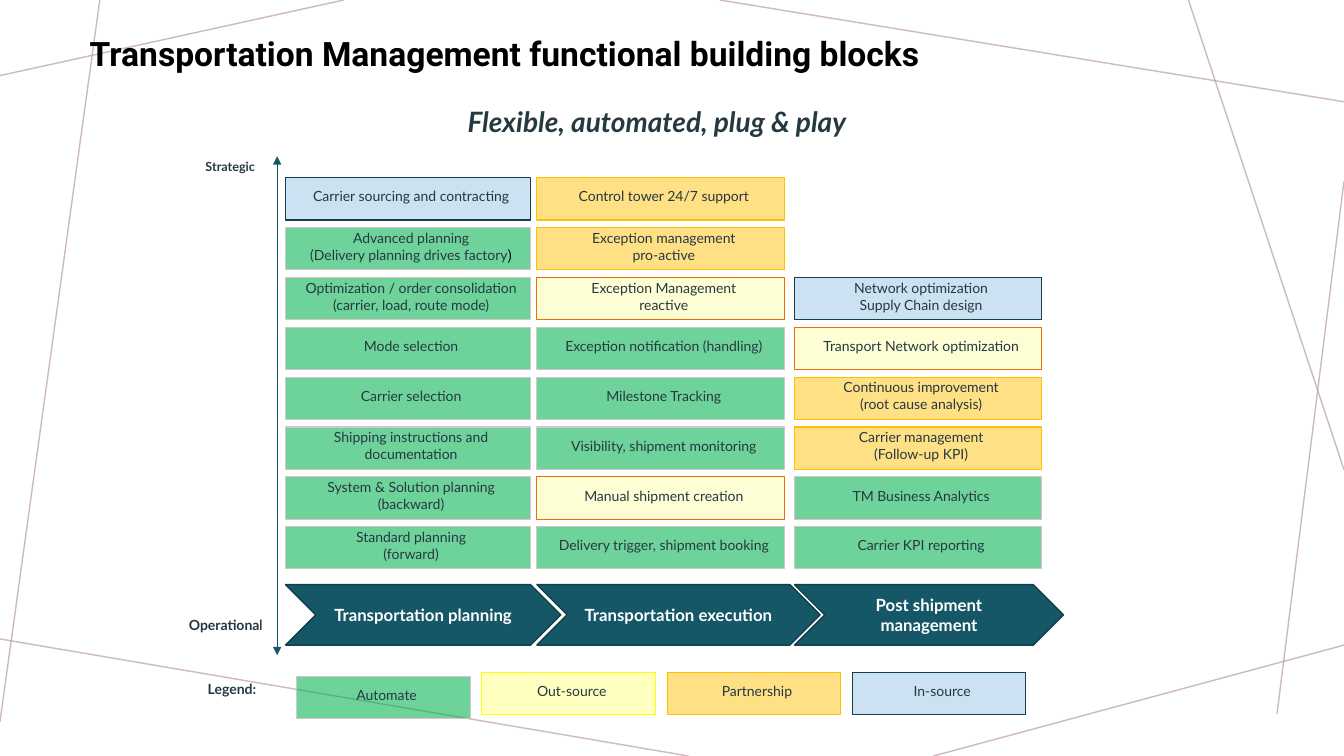
from pptx import Presentation
from pptx.dml.color import RGBColor
from pptx.enum.shapes import MSO_CONNECTOR as Link, MSO_SHAPE as Form
from pptx.enum.text import MSO_ANCHOR as Anchor, PP_ALIGN as Align
from pptx.oxml.ns import qn
from pptx.oxml.xmlchemy import OxmlElement as Node
from pptx.util import Pt

INK, TEAL = "263941", "155767"
# kind: fill, opacity in percent, outline
KINDS = {
    "auto": ("00B050", 57, "D6C4C6"),
    "out": ("FCFC30", 20, "EB6D04"),
    "part": ("FFC000", 48, "FFC000"),
    "own": ("0070C0", 20, "10414D"),
    "key": ("FFFF99", 62, "FFFF00"),
}
WEB = [
    (245.5, 0, 0, 54), (71.3, 0, 0, 515.5), (491.8, 540, 0, 456.4),
    (960, 460.8, 666.7, 540), (960, 129.6, 912.2, 509.8),
    (960, 335.5, 848.9, 0), (960, 72.7, 514.1, 0),
]
# left, width, chevron width, chevron label, index of top row, blocks downward
STAGES = [
    (204, 175, 196.6, "Transportation planning", 0, [
        ("own", "Carrier sourcing and contracting"),
        ("auto", "Advanced planning\n(Delivery planning drives factory|)"),
        ("auto", "Optimization / order consolidation (carrier, load, route mode)"),
        ("auto", "Mode selection"),
        ("auto", "Carrier selection"),
        ("auto", "Shipping instructions and documentation"),
        ("auto", "System & Solution planning\n(backward)"),
        ("auto", "Standard planning\n(forward)")]),
    (383.5, 177, 202.3, "Transportation execution", 0, [
        ("part", "Control tower 24/7 support"),
        ("part", "Exception management\npro-active"),
        ("out", "Exception Management\nreactive"),
        ("auto", "Exception notification (handling)"),
        ("auto", "Milestone Tracking"),
        ("auto", "Visibility, shipment monitoring"),
        ("out", "Manual shipment creation"),
        ("auto", "Delivery trigger, shipment booking")]),
    (567.5, 176.5, 192.2, "Post shipment management", 2, [
        ("own", "Network optimization\nSupply Chain design"),
        ("out", "Transport Network optimization"),
        ("part", "Continuous improvement\n(root cause analysis)"),
        ("part", "Carrier management\n(Follow-up KPI)"),
        ("auto", "TM Business Analytics"),
        ("auto", "Carrier KPI reporting")]),
]
LEGEND = [("auto", "Automate", 483), ("key", "Out-source", 480.2),
          ("part", "Partnership", 480.2), ("own", "In-source", 480.2)]
TOP, STEP, HIGH = 127, 35.6, 30.2


def tint(code):
    return RGBColor.from_string(code)


def fade(solid, pct):
    """Set the opacity of a solidFill element."""
    alpha = Node("a:alpha")
    alpha.set("val", str(pct * 1000))
    solid[0].append(alpha)


class Board:
    def __init__(self, slide):
        self.shapes = slide.shapes
        self.style = {"name": "Lato", "size": Pt(10), "bold": False,
                      "italic": False}

    def letter(self, frame, text, color=INK, align=Align.CENTER, indent=0, **look):
        """Fill a frame; a bar in a line sets off its plain condensed tail."""
        for i, line in enumerate(text.split("\n")):
            para = frame.add_paragraph() if i else frame.paragraphs[0]
            para.alignment = align
            if indent:
                props = para._p.get_or_add_pPr()
                props.set("marL", str(Pt(indent)))
                props.set("indent", "0")
            for part, words in enumerate(line.split("|")):
                run = para.add_run()
                run.text = words
                looks = {**self.style, **look}
                if part:
                    looks.update(name="Roboto Condensed", bold=False)
                for key, value in looks.items():
                    setattr(run.font, key, value)
                run.font.color.rgb = tint("000000" if part else color)

    def label(self, box, text, wrap=True, inset=None, **look):
        frame = self.shapes.add_textbox(*map(Pt, box)).text_frame
        frame.word_wrap = wrap
        if inset is not None:
            for side in ("left", "top", "right", "bottom"):
                setattr(frame, "margin_" + side, Pt(inset))
        self.letter(frame, text, **look)

    def shape(self, form, box, fill, edge, width):
        item = self.shapes.add_shape(form, *map(Pt, box))
        item.shadow.inherit = False
        item.fill.solid()
        item.fill.fore_color.rgb = tint(fill)
        item.line.color.rgb = tint(edge)
        item.line.width = Pt(width)
        item.text_frame.word_wrap = True
        item.text_frame.vertical_anchor = Anchor.MIDDLE
        return item

    def block(self, box, kind, text):
        fill, pct, edge = KINDS[kind]
        item = self.shape(Form.RECTANGLE, box, fill, edge, 0.75)
        fade(item._element.spPr.find(qn("a:solidFill")), pct)
        frame = item.text_frame
        for side, gap in {"left": 0, "top": 3.6, "right": 0, "bottom": 7.2}.items():
            setattr(frame, "margin_" + side, Pt(gap))
        self.letter(frame, text, indent=4.3)

    def arrow(self, box, text):
        item = self.shape(Form.CHEVRON, box, TEAL, "10404C", 1)
        self.letter(item.text_frame, text, color="FFFFFF", size=Pt(12), bold=True)

    def line(self, ends, color, width, pct=100, tips=False):
        item = self.shapes.add_connector(Link.STRAIGHT, *map(Pt, ends))
        item.line.color.rgb = tint(color)
        item.line.width = Pt(width)
        props = item._element.spPr
        stroke = props.find(qn("a:ln"))
        if pct < 100:
            fade(stroke.find(qn("a:solidFill")), pct)
        if tips:
            for name in ("a:headEnd", "a:tailEnd"):
                tip = Node(name)
                tip.set("type", "triangle")
                stroke.append(tip)
        props.append(Node("a:effectLst"))


def main():
    deck = Presentation()
    deck.slide_width, deck.slide_height = Pt(960), Pt(540)
    board = Board(deck.slides.add_slide(deck.slide_layouts[6]))

    for ends in WEB:
        board.line(ends, "BA9CA0", 1, pct=70)
    board.label((64.1, 23.8, 742.3, 40.3),
                "Transportation Management functional building blocks", inset=0,
                color="000000", align=Align.LEFT, name="Roboto",
                size=Pt(24), bold=True)
    board.label((326.9, 71.3, 301.7, 31.7), "Flexible, automated, plug & play",
                wrap=False, align=Align.LEFT, size=Pt(20), bold=True, italic=True)

    board.line((198, 111.6, 198, 468), TEAL, 0.5, tips=True)
    board.label((139.7, 110.2, 59.8, 18), "Strategic", align=Align.LEFT,
                size=Pt(9), bold=True)
    board.label((120.2, 437, 77.8, 19.4), "Operationa|l", indent=4.3, bold=True)

    for left, wide, span, title, first, blocks in STAGES:
        board.arrow((left, 417.6, span, 43.2), title)
        for row, (kind, text) in enumerate(blocks, first):
            board.block((left, TOP + row * STEP, wide, HIGH), kind, text)

    board.label((124.6, 482.4, 77.8, 19.4), "Legend:", indent=4.3, bold=True)
    for i, (kind, text, top) in enumerate(LEGEND):
        board.block((212 + i * 132.3, top, 124, HIGH), kind, text)

    deck.save("out.pptx")


if __name__ == "__main__":
    main()
